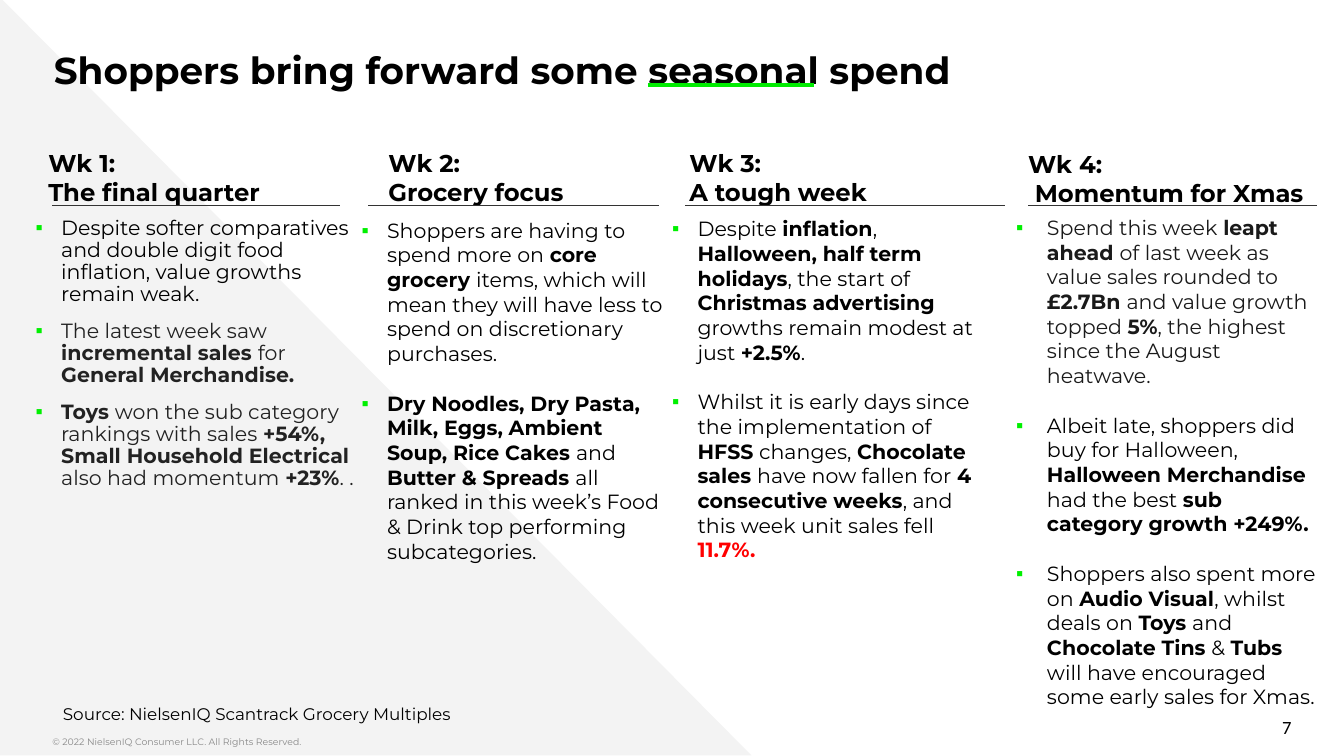
from dataclasses import dataclass

from lxml.etree import SubElement
from pptx import Presentation
from pptx.dml.color import RGBColor
from pptx.enum.shapes import MSO_CONNECTOR, MSO_SHAPE
from pptx.enum.text import MSO_ANCHOR, MSO_AUTO_SIZE, PP_ALIGN
from pptx.oxml.ns import qn
from pptx.util import Inches, Pt


@dataclass(frozen=True)
class Theme:
    face: str = "Montserrat"
    plain: str = "Calibri"
    black: str = "000000"
    coal: str = "1A1A1A"
    soot: str = "222222"
    rule: str = "333333"
    gray: str = "888888"
    wedge: str = "F3F3F3"
    green: str = "00EB00"
    mark: str = "00F000"
    red: str = "FF0000"
    title: float = 20
    head: float = 13
    body: float = 11
    page: float = 10
    source: float = 9
    legal: float = 5


class Deck:
    COLS, ROWS = 100, 100 * 9 / 16

    def __init__(self, theme):
        self.theme = theme
        self.show = Presentation()
        self.show.slide_width = Inches(10)
        self.show.slide_height = Inches(10) * 9 // 16
        self.slide = self.show.slides.add_slide(self.show.slide_layouts[4])
        self.holes = {p.placeholder_format.idx: p for p in self.slide.placeholders}

    def grid(self, x, y, w, h):
        col = self.show.slide_width / self.COLS
        row = self.show.slide_height / self.ROWS
        return [round(n * unit) for n, unit in zip((x, y, w, h), (col, row) * 2)]

    def place(self, shape, spot):
        shape.left, shape.top, shape.width, shape.height = self.grid(*spot)

    def frame(self, shape, side=0, pad=0.05, anchor=MSO_ANCHOR.TOP):
        frame = shape.text_frame
        frame.word_wrap = True
        frame.auto_size = MSO_AUTO_SIZE.NONE
        frame.vertical_anchor = anchor
        frame.margin_left = frame.margin_right = Inches(side)
        frame.margin_top = frame.margin_bottom = Inches(pad)
        return frame

    def style(self, para, size, color, bold=False, face=None):
        font = para.font
        font.name = face or self.theme.face
        font.size = Pt(size)
        font.bold = bold
        font.color.rgb = RGBColor.from_string(color)

    def title(self, text, spot):
        shape = self.slide.shapes.title
        self.place(shape, spot)
        para = self.frame(shape, pad=0.1).paragraphs[0]
        para.text = text
        para.alignment = PP_ALIGN.LEFT
        self.style(para, self.theme.title, self.theme.black, True)

    def head(self, lines, spot, inset=0):
        box = self.slide.shapes.add_textbox(*self.grid(*spot))
        frame = self.frame(box, pad=0.1, anchor=MSO_ANCHOR.BOTTOM)
        frame.text = "\n".join(lines)
        for para in frame.paragraphs:
            self.style(para, self.theme.head, self.theme.black, True)
        if inset:
            para._p.get_or_add_pPr().set("marL", str(Inches(inset)))

    def note(self, text, spot, size, color, side=0, face=None,
             align=PP_ALIGN.LEFT, anchor=MSO_ANCHOR.TOP):
        box = self.slide.shapes.add_textbox(*self.grid(*spot))
        para = self.frame(box, side, anchor=anchor).paragraphs[0]
        para.text = text
        para.alignment = align
        self.style(para, size, color, face=face)

    def bullet(self, para, left, hang):
        props = para._p.get_or_add_pPr()
        props.set("marL", str(Inches(left)))
        props.set("indent", str(-Inches(hang)))
        tint = SubElement(props, qn("a:buClr"))
        SubElement(tint, qn("a:srgbClr")).set("val", self.theme.mark)
        SubElement(props, qn("a:buChar")).set("char", "▪")

    def items(self, hole, spot, texts, colors, left=0.19, hang=0.19,
              gap=13.4, pitch=None):
        shape = self.holes[hole]
        self.place(shape, spot)
        frame = self.frame(shape)
        for i, (text, color) in enumerate(zip(texts, colors)):
            para = frame.add_paragraph() if i else frame.paragraphs[0]
            self.bullet(para, left, hang)
            para.space_before = Pt(gap if i else 0)
            para.line_spacing = Pt(pitch) if pitch else 1.0
            self.style(para, self.theme.body, color)
            self.runs(para, text)

    def runs(self, para, text):
        for i, part in enumerate(text.split("*")):
            if not part:
                continue
            run = para.add_run()
            run.text = part.lstrip("#")
            if i % 2:
                run.font.bold = True
            if part.startswith("#"):
                run.font.color.rgb = RGBColor.from_string(self.theme.red)

    def line(self, x, y, end, color, width):
        left, top, right, _ = self.grid(x, y, end, 0)
        line = self.slide.shapes.add_connector(
            MSO_CONNECTOR.STRAIGHT, left, top, right, top)
        line.line.color.rgb = RGBColor.from_string(color)
        line.line.width = Pt(width)
        SubElement(line._element.spPr, qn("a:effectLst"))

    def wedge(self, spot):
        shape = self.slide.shapes.add_shape(
            MSO_SHAPE.RIGHT_TRIANGLE, *self.grid(*spot))
        shape.shadow.inherit = False
        shape.fill.solid()
        shape.fill.fore_color.rgb = RGBColor.from_string(self.theme.wedge)
        shape.line.fill.background()
        self.slide.shapes._spTree.insert(2, shape._element)


def main():
    theme = Theme()
    deck = Deck(theme)
    black = [theme.black] * 3

    deck.wedge((0, -0.2, 55.9, 56.4))
    deck.line(48.2, 6.3, 60.6, theme.green, 2.25)
    deck.title("Shoppers bring forward some seasonal spend", (4, 2.5, 94.5, 4.3))

    heads = [
        ("The final quarter", 3.6, 12.05, 24.3, 0, 3.9, 25.3),
        ("Grocery focus", 28.9, 12.05, 25.4, 0, 27.4, 49),
        ("A tough week", 51.3, 12.05, 23.4, 0, 51, 74.8),
        ("Momentum for Xmas", 76.5, 12.15, 25.4, 0.05, 76.5, 98),
    ]
    for week, (name, x, y, wide, inset, start, end) in enumerate(heads, 1):
        deck.head((f"Wk {week}:", name), (x, y, wide, 4.3), inset)
        deck.line(start, 15.3, end, theme.rule, 0.75)

    deck.items(1, (2.65, 15.7, 23.85, 30.9), [
        "Despite softer comparatives and double digit food inflation, "
        "value growths remain weak.",
        "The latest week saw* incremental sales *for* General Merchandise.*",
        "*Toys *won the sub category rankings with sales *+54%, Small "
        "Household Electrical* also had momentum *+23%*. .",
    ], [theme.black, theme.soot, theme.soot], gap=8, pitch=11.8)
    deck.items(2, (26.8, 15.7, 22.7, 39.1), [
        "Shoppers are having to spend more on *core grocery *items, which "
        "will mean they will have less to spend on discretionary purchases.",
        "*Dry Noodles, Dry Pasta, Milk, Eggs, Ambient Soup, Rice Cakes *and "
        "*Butter & Spreads *all ranked in this week’s Food & Drink top "
        "performing subcategories.",
    ], black, left=0.2)
    deck.items(3, (50, 15.6, 23.8, 35.8), [
        "Despite *inflation*, *Halloween, half term holidays*, the start of "
        "*Christmas advertising *growths remain modest at just *+2.5%*.",
        "Whilst it is early days since the implementation of *HFSS* changes, "
        "*Chocolate sales *have now fallen for *4 consecutive weeks*, and "
        "this week unit sales fell *#11.7%.*",
    ], black)
    deck.items(4, (75.4, 15.5, 22.7, 35.8), [
        "Spend this week *leapt ahead *of last week as value sales rounded "
        "to *£2.7Bn *and value growth topped *5%*, the highest since the "
        "August heatwave.",
        "Albeit late, shoppers did buy for Halloween, *Halloween Merchandise "
        "*had the best *sub category growth +249%.*",
        "Shoppers also spent more on *Audio Visual*, whilst deals on *Toys "
        "*and *Chocolate Tins* & *Tubs *will have encouraged some early "
        "sales for Xmas.",
    ], [theme.coal, theme.black, theme.black], left=0.25, hang=0.23)

    deck.note("Source: NielsenIQ Scantrack Grocery Multiples",
              (3.7, 51.85, 51.6, 2.5), theme.source, theme.black, side=0.1)
    deck.note("© 2022 NielsenIQ Consumer LLC. All Rights Reserved.",
              (3.9, 54.3, 55.4, 1.9), theme.legal, theme.gray)
    deck.note("7", (73.6, 52.6, 22.5, 3), theme.page, theme.black,
              face=theme.plain, align=PP_ALIGN.RIGHT, anchor=MSO_ANCHOR.MIDDLE)
    deck.show.save("out.pptx")


if __name__ == "__main__":
    main()
